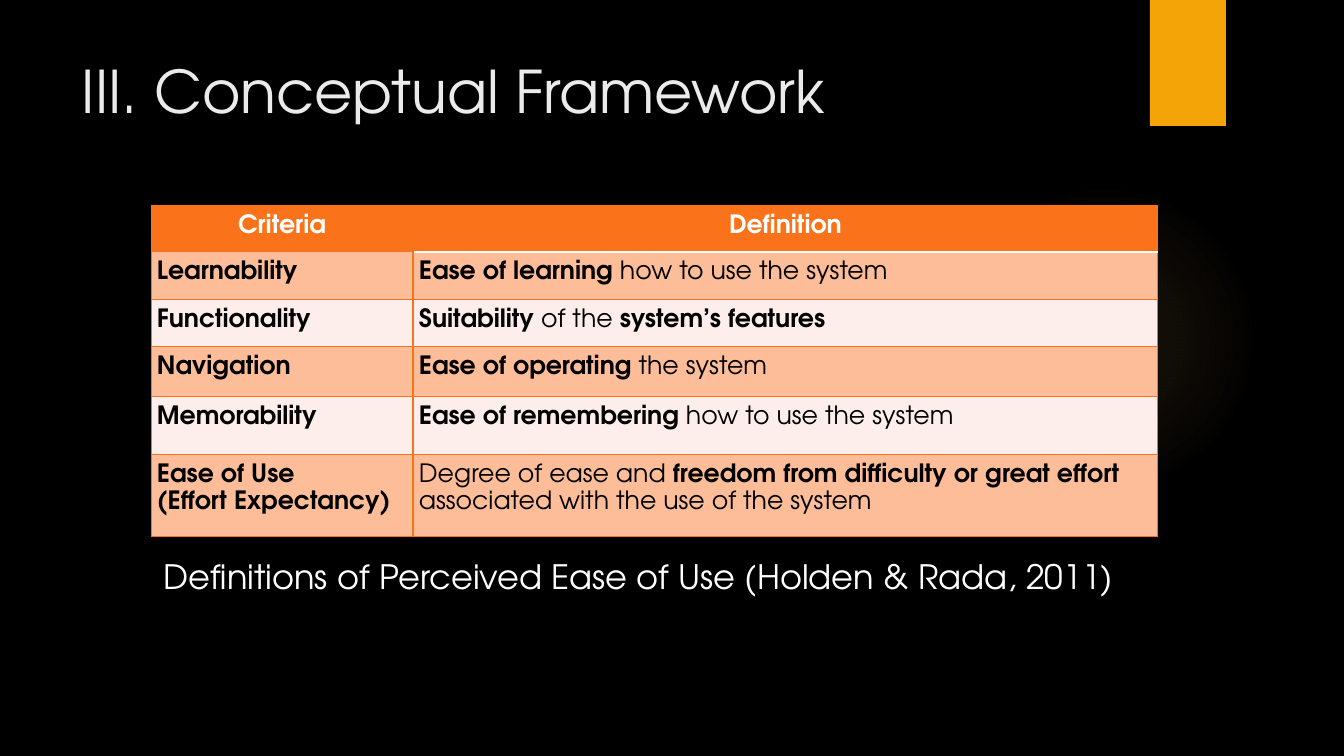
import pptx
import pptx.util
import pptx.dml.color
import pptx.enum.shapes
import pptx.enum.text
import pptx.oxml
import pptx.oxml.ns
from dataclasses import dataclass

PX = 914400 / 100.8  # EMU in one px
ALIGN = pptx.enum.text.PP_ALIGN
SHAPE = pptx.enum.shapes.MSO_SHAPE


@dataclass(frozen=True)
class Theme:
    font: str = "TeX Gyre Adventor"
    background: str = "000000"
    accent: str = "F5A408"
    glow: str = "FAC96A"
    title: str = "EBEBEB"
    white: str = "FFFFFF"
    body: str = "000000"
    orange: str = "FA731A"
    bands: tuple = ("FDBD98", "FEEEEB")
    title_size: int = 42
    caption_size: int = 24
    table_size: int = 18
    thin: float = 0.75
    thick: float = 1.5


THEME = Theme()

# Each definition is a list of (text, bold) runs
CRITERIA = [
    (["Learnability"], [("Ease of learning", True), (" how to use the system", False)]),
    (["Functionality"], [("Suitability", True), (" of the ", False),
                         ("system’s features", True)]),
    (["Navigation"], [("Ease of operating", True), (" the system", False)]),
    (["Memorability"], [("Ease of remembering", True), (" how to use the system", False)]),
    (["Ease of Use", "(Effort Expectancy)"],
     [("Degree of ease and ", False), ("freedom from difficulty or great effort", True),
      (" associated with the use of the system", False)]),
]
COLUMN_WIDTHS = (262, 745)
ROW_HEIGHTS = (46, 48, 46, 50, 58, 81)


def px(length):
    return pptx.util.Emu(round(length * PX))


def rgb(color):
    return pptx.dml.color.RGBColor.from_string(color)


def add_runs(paragraph, runs, size, color):
    for text, bold in runs:
        run = paragraph.add_run()
        run.text = text
        run.font.name = THEME.font
        run.font.size = pptx.util.Pt(size)
        run.font.bold = bold
        run.font.color.rgb = rgb(color)


def add_plain_shape(slide, preset, box, color):
    shape = slide.shapes.add_shape(preset, *map(px, box))
    shape.shadow.inherit = False
    shape.fill.solid()
    shape.fill.fore_color.rgb = rgb(color)
    shape.line.fill.background()
    return shape


def add_text(slide, box, text, size, color, align):
    frame = slide.shapes.add_textbox(*map(px, box)).text_frame
    frame.word_wrap = True
    frame.paragraphs[0].alignment = align
    add_runs(frame.paragraphs[0], [(text, False)], size, color)


def add_decoration(slide, glow_box, accent_box):
    # Soft glow that fades out from its centre
    glow = add_plain_shape(slide, SHAPE.OVAL, glow_box, THEME.glow)
    stops = "".join(
        f'<a:gs pos="{at * 1000}"><a:srgbClr val="{THEME.glow}">'
        f'<a:alpha val="{alpha * 1000}"/></a:srgbClr></a:gs>'
        for at, alpha in ((0, 7), (36, 6), (69, 0), (100, 0)))
    gradient = pptx.oxml.parse_xml(
        f'<a:gradFill {pptx.oxml.ns.nsdecls("a")}><a:gsLst>{stops}</a:gsLst>'
        '<a:path path="circle"><a:fillToRect l="50000" t="50000" r="50000" b="50000"/>'
        '</a:path></a:gradFill>')
    properties = glow.element.spPr
    properties.replace(properties.find(pptx.oxml.ns.qn("a:solidFill")), gradient)

    # Accent tab at the top edge
    add_plain_shape(slide, SHAPE.RECTANGLE, accent_box, THEME.accent)


def style_cell(cell, fill, borders):
    cell.margin_left = cell.margin_right = px(6)
    cell.margin_top = cell.margin_bottom = px(6)
    properties = cell._tc.get_or_add_tcPr()
    for side in "LRTB":
        color, width = borders.get(side, (THEME.orange, THEME.thin))
        properties.append(pptx.oxml.parse_xml(
            f'<a:ln{side} {pptx.oxml.ns.nsdecls("a")} w="{pptx.util.Pt(width)}">'
            f'<a:solidFill><a:srgbClr val="{color}"/></a:solidFill></a:ln{side}>'))
    cell.fill.solid()
    cell.fill.fore_color.rgb = rgb(fill)


def fill_cell(cell, paragraphs, color, align):
    for index, runs in enumerate(paragraphs):
        frame = cell.text_frame
        paragraph = frame.add_paragraph() if index else frame.paragraphs[0]
        paragraph.alignment = align
        paragraph.line_spacing = 1.15
        add_runs(paragraph, runs, THEME.table_size, color)


def add_criteria_table(slide, left, top):
    table = slide.shapes.add_table(
        len(ROW_HEIGHTS), len(COLUMN_WIDTHS), px(left), px(top),
        px(sum(COLUMN_WIDTHS)), px(sum(ROW_HEIGHTS))).table
    for column, width in zip(table.columns, COLUMN_WIDTHS):
        column.width = px(width)
    for row, height in zip(table.rows, ROW_HEIGHTS):
        row.height = px(height)

    # Header row, with a white rule under the definitions
    white_rule = (THEME.white, THEME.thick)
    for column, (heading, borders) in enumerate(
            (("Criteria", {}), ("Definition", {"B": white_rule}))):
        cell = table.cell(0, column)
        style_cell(cell, THEME.orange, borders)
        fill_cell(cell, [[(heading, True)]], THEME.white, ALIGN.CENTER)

    # Banded criteria rows
    divider = (THEME.orange, THEME.thick)
    for row, (names, definition) in enumerate(CRITERIA, start=1):
        band = THEME.bands[(row - 1) % 2]
        criterion_cell, definition_cell = table.cell(row, 0), table.cell(row, 1)
        style_cell(criterion_cell, band, {"R": divider})
        fill_cell(criterion_cell, [[(name, True)] for name in names],
                  THEME.body, ALIGN.JUSTIFY)
        style_cell(definition_cell, band,
                   {"L": divider, **({"T": white_rule} if row == 1 else {})})
        fill_cell(definition_cell, [definition], THEME.body, ALIGN.LEFT)


def build_framework_slide(deck):
    slide = deck.slides.add_slide(deck.slide_layouts[6])
    slide.background.fill.solid()
    slide.background.fill.fore_color.rgb = rgb(THEME.background)
    add_decoration(slide, (949, 184, 310, 310), (1150, 0, 76, 126))
    add_text(slide, (72, 50, 1037, 154), "III. Conceptual Framework",
             THEME.title_size, THEME.title, ALIGN.LEFT)
    add_text(slide, (151, 551, 975, 50),
             "Definitions of Perceived Ease of Use (Holden & Rada, 2011)",
             THEME.caption_size, THEME.white, ALIGN.CENTER)
    add_criteria_table(slide, 151, 205)


def main():
    deck = pptx.Presentation()
    deck.slide_width, deck.slide_height = px(1344), px(756)
    build_framework_slide(deck)
    deck.save("out.pptx")


if __name__ == "__main__":
    main()
